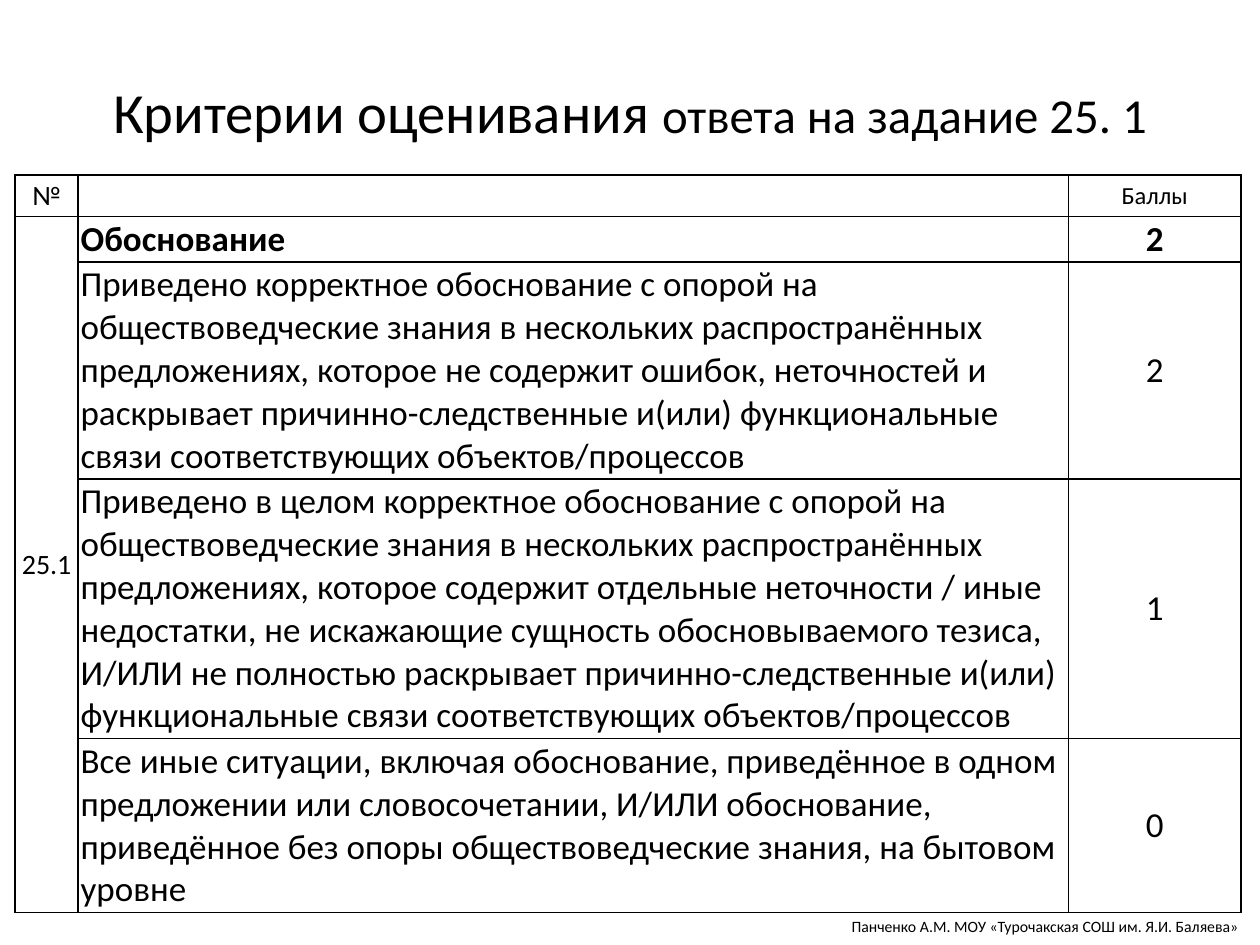
from dataclasses import dataclass

from lxml.etree import SubElement
from pptx import Presentation
from pptx.dml.color import RGBColor
from pptx.enum.text import MSO_ANCHOR, MSO_AUTO_SIZE, PP_ALIGN
from pptx.oxml.ns import qn
from pptx.util import Inches, Pt


@dataclass(frozen=True)
class Theme:
    font: str = "Calibri"
    ink: str = "000000"
    title: float = 32.4
    subtitle: float = 27.9
    body: float = 20
    number: float = 16
    header: float = 14
    footer: float = 9
    border: float = 1


THEME = Theme()
BLANK_LAYOUT = 6
COLUMN_WIDTHS = (0.5, 7.86, 1.37)
ROW_HEIGHTS = (0.33, 0.29, 1.12, 1.39, 0.84)
TASK_NUMBER = "25.1"
CRITERIA = (
    ("Обоснование", "2"),
    ("Приведено корректное обоснование с опорой на обществоведческие знания "
     "в нескольких распространённых предложениях, которое не содержит ошибок, "
     "неточностей и раскрывает причинно-следственные и(или) функциональные "
     "связи соответствующих объектов/процессов", "2"),
    ("Приведено в целом корректное обоснование с опорой на обществоведческие "
     "знания в нескольких распространённых\n"
     "предложениях, которое содержит отдельные неточности / иные недостатки, "
     "не искажающие сущность обосновываемого тезиса, И/ИЛИ не полностью "
     "раскрывает причинно-следственные и(или) функциональные связи "
     "соответствующих объектов/процессов", "1"),
    ("Все иные ситуации, включая обоснование, приведённое в одном предложении "
     "или словосочетании, И/ИЛИ обоснование, приведённое без опоры "
     "обществоведческие знания, на бытовом уровне", "0"),
)


def style_font(font, size, bold=False):
    font.name = THEME.font
    font.size = Pt(size)
    font.bold = bold
    font.color.rgb = RGBColor.from_string(THEME.ink)


def add_text_box(slide, left, top, width, height):
    shape = slide.shapes.add_textbox(
        Inches(left), Inches(top), Inches(width), Inches(height))
    shape.text_frame.word_wrap = True
    return shape.text_frame


def add_title(slide):
    text_frame = add_text_box(slide, 0.5, 0.76, 9, 0.79)
    text_frame.auto_size = MSO_AUTO_SIZE.NONE
    text_frame.vertical_anchor = MSO_ANCHOR.MIDDLE
    # The line sits in the upper part of the box
    text_frame.margin_top = 0
    text_frame.margin_bottom = Inches(0.55)
    paragraph = text_frame.paragraphs[0]
    paragraph.alignment = PP_ALIGN.CENTER
    for text, size in (("Критерии оценивания ", THEME.title),
                       ("ответа на задание 25. 1", THEME.subtitle)):
        run = paragraph.add_run()
        run.text = text
        style_font(run.font, size)


def add_footer(slide):
    text_frame = add_text_box(slide, 6.66, 7.23, 3.31, 0.25)
    text_frame.auto_size = MSO_AUTO_SIZE.SHAPE_TO_FIT_TEXT
    text_frame.text = "Панченко А.М. МОУ «Турочакская СОШ им. Я.И. Баляева»"
    style_font(text_frame.paragraphs[0].runs[0].font, THEME.footer)


def set_borders(cell):
    """Draw the four borders; they must precede the fill in the cell XML."""
    properties = cell._tc.get_or_add_tcPr()
    for side in ("a:lnL", "a:lnR", "a:lnT", "a:lnB"):
        line = SubElement(properties, qn(side), w=str(Pt(THEME.border)))
        fill = SubElement(line, qn("a:solidFill"))
        SubElement(fill, qn("a:srgbClr"), val=THEME.ink)


def format_cell(cell):
    set_borders(cell)
    cell.fill.background()
    cell.vertical_anchor = MSO_ANCHOR.MIDDLE
    cell.margin_left = cell.margin_right = Inches(0.02)
    cell.margin_top = cell.margin_bottom = Inches(0.01)
    style_font(cell.text_frame.paragraphs[0].font, THEME.header)


def fill_cell(cell, text, size, bold=False, alignment=PP_ALIGN.CENTER):
    cell.text_frame.text = text
    for paragraph in cell.text_frame.paragraphs:
        paragraph.alignment = alignment
        for run in paragraph.runs:
            style_font(run.font, size, bold)


def add_criteria_table(slide):
    table = slide.shapes.add_table(
        len(ROW_HEIGHTS), len(COLUMN_WIDTHS), Inches(0.12), Inches(1.39),
        Inches(sum(COLUMN_WIDTHS)), Inches(sum(ROW_HEIGHTS))).table
    table.first_row = table.horz_banding = False
    for column, width in zip(table.columns, COLUMN_WIDTHS):
        column.width = Inches(width)
    for row, height in zip(table.rows, ROW_HEIGHTS):
        row.height = Inches(height)
    for cell in table.iter_cells():
        format_cell(cell)

    fill_cell(table.cell(0, 0), "№", THEME.number)
    fill_cell(table.cell(0, 2), "Баллы", THEME.header)
    table.cell(1, 0).merge(table.cell(len(CRITERIA), 0))
    fill_cell(table.cell(1, 0), TASK_NUMBER, THEME.number)
    for row, (criterion, points) in enumerate(CRITERIA, start=1):
        bold = row == 1
        fill_cell(table.cell(row, 1), criterion, THEME.body, bold, PP_ALIGN.LEFT)
        fill_cell(table.cell(row, 2), points, THEME.body, bold)


def main():
    presentation = Presentation()
    presentation.slide_width = Inches(10)
    presentation.slide_height = Inches(7.5)
    slide = presentation.slides.add_slide(
        presentation.slide_layouts[BLANK_LAYOUT])
    add_title(slide)
    add_criteria_table(slide)
    add_footer(slide)
    presentation.save("out.pptx")


if __name__ == "__main__":
    main()
